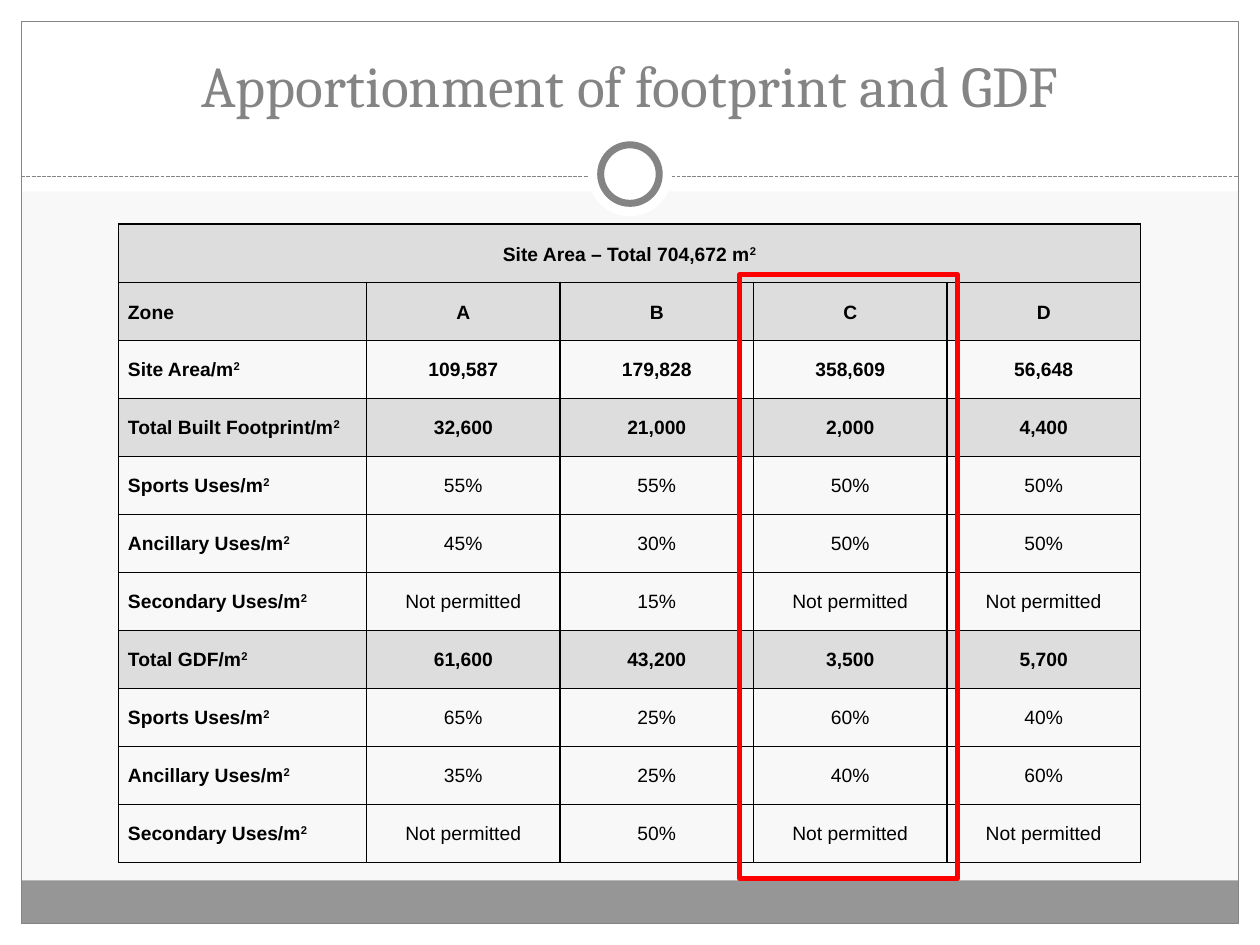
"""Builds a slide with a table of footprint and GDF by zone."""
from lxml.etree import SubElement
from pptx import Presentation
from pptx.dml.color import RGBColor
from pptx.enum.dml import MSO_LINE
from pptx.enum.shapes import MSO_CONNECTOR, MSO_SHAPE
from pptx.enum.text import MSO_ANCHOR, PP_ALIGN
from pptx.oxml.ns import qn
from pptx.util import Cm, Pt

WHITE = RGBColor(0xFF, 0xFF, 0xFF)
BLACK = RGBColor(0, 0, 0)
PALE = RGBColor(0xF8, 0xF8, 0xF8)
LIGHT = RGBColor(0xDD, 0xDD, 0xDD)
GREY = RGBColor(0x96, 0x96, 0x96)
DARK = RGBColor(0x84, 0x84, 0x84)
RED = RGBColor(0xFF, 0, 0)

WIDTH, HEIGHT, EDGE = 25.4, 19.05, 0.43
INNER = WIDTH - 2 * EDGE
COLS = [5, 3.9, 3.9, 3.9, 3.9]
ROW = 1.17
SHADED = (0, 1, 3, 7)
STRONG = (0, 1, 2, 3, 7)
ROWS = [
    ["Site Area – Total 704,672 m²", "", "", "", ""],
    ["Zone", "A", "B", "C", "D"],
    ["Site Area/m²", "109,587", "179,828", "358,609", "56,648"],
    ["Total Built Footprint/m²", "32,600", "21,000", "2,000", "4,400"],
    ["Sports Uses/m²", "55%", "55%", "50%", "50%"],
    ["Ancillary Uses/m²", "45%", "30%", "50%", "50%"],
    ["Secondary Uses/m²", "Not permitted", "15%", "Not permitted", "Not permitted"],
    ["Total GDF/m²", "61,600", "43,200", "3,500", "5,700"],
    ["Sports Uses/m²", "65%", "25%", "60%", "40%"],
    ["Ancillary Uses/m²", "35%", "25%", "40%", "60%"],
    ["Secondary Uses/m²", "Not permitted", "50%", "Not permitted", "Not permitted"],
]


def add_box(slide, kind, left, top, width, height, fill=None, line=None, weight=0.75):
    """Add a preset shape with an optional fill and outline."""
    box = slide.shapes.add_shape(kind, Cm(left), Cm(top), Cm(width), Cm(height))
    box.shadow.inherit = False
    if fill is None:
        box.fill.background()
    else:
        box.fill.solid()
        box.fill.fore_color.rgb = fill
    if line is None:
        box.line.fill.background()
    else:
        box.line.color.rgb = line
        box.line.width = Pt(weight)
    return box


def add_rule(slide, top):
    """Add the dashed rule under the title."""
    rule = slide.shapes.add_connector(
        MSO_CONNECTOR.STRAIGHT, Cm(EDGE), Cm(top), Cm(WIDTH - EDGE), Cm(top))
    rule.line.color.rgb = DARK
    rule.line.width = Pt(0.75)
    rule.line.dash_style = MSO_LINE.SQUARE_DOT
    SubElement(rule._element.spPr, qn("a:effectLst"))


def add_frame(slide):
    """Add the margins, footer band, border, rule and ring."""
    rect, oval = MSO_SHAPE.RECTANGLE, MSO_SHAPE.OVAL
    add_box(slide, rect, 0, HEIGHT - EDGE, WIDTH, EDGE, WHITE)
    add_box(slide, rect, 0, 0, WIDTH, 3.86, WHITE)
    for left in (0, WIDTH - EDGE):
        add_box(slide, rect, left, 0, EDGE, HEIGHT, WHITE)
    add_box(slide, rect, EDGE, 17.75, INNER, 0.87, GREY)
    add_box(slide, rect, EDGE, EDGE, INNER, HEIGHT - 2 * EDGE, line=DARK)
    add_rule(slide, 3.56)
    add_box(slide, oval, 11.85, 2.66, 1.7, 1.7, WHITE)
    add_box(slide, oval, 12.11, 2.92, 1.18, 1.18, WHITE, DARK, 4)


def style_font(font, name, size, color, bold=False):
    """Set the face, size, colour and weight of a font."""
    font.name, font.size, font.bold = name, Pt(size), bold
    font.color.rgb = color


def add_title(slide, text):
    """Add the centred title."""
    frame = slide.shapes.add_textbox(Cm(0.85), Cm(0.64), Cm(23.7), Cm(2.12)).text_frame
    frame.word_wrap = True
    frame.vertical_anchor = MSO_ANCHOR.MIDDLE
    frame.text = text
    para = frame.paragraphs[0]
    para.alignment = PP_ALIGN.CENTER
    style_font(para.runs[0].font, "Cambria", 33, DARK)


def set_edges(cell):
    """Draw a thin black line on each side of a cell."""
    props = cell._tc.get_or_add_tcPr()
    for side in ("lnL", "lnR", "lnT", "lnB"):
        edge = SubElement(props, qn(f"a:{side}"), w=str(Pt(1)))
        paint = SubElement(edge, qn("a:solidFill"))
        SubElement(paint, qn("a:srgbClr"), val=str(BLACK))


def set_text(cell, text, row, col):
    """Write the cell text, raising a final square sign."""
    para = cell.text_frame.paragraphs[0]
    base, square, _ = text.partition("²")
    para.text = base
    if square:
        power = para.add_run()
        power.text = "2"
        power._r.get_or_add_rPr().set("baseline", "30000")
    for run in para.runs:
        style_font(run.font, "Arial", 11, BLACK, col == 0 or row in STRONG)
    if col or row == 0:
        para.alignment = PP_ALIGN.CENTER
    else:
        para.alignment = PP_ALIGN.LEFT if row in (1, 3) else PP_ALIGN.JUSTIFY
    gap = Pt(12 if row < 2 else 6)
    para.space_before = gap
    para.space_after = gap if row else Pt(0)
    if row < 2:
        para.line_spacing = 1.15


def set_cell(cell, text, row, col):
    """Style one table cell and fill in its text."""
    set_edges(cell)
    cell.margin_left = cell.margin_right = Cm(0.19)
    cell.margin_top = cell.margin_bottom = 0
    cell.vertical_anchor = MSO_ANCHOR.MIDDLE
    if row in SHADED:
        cell.fill.solid()
        cell.fill.fore_color.rgb = LIGHT
    else:
        cell.fill.background()
    if text:
        set_text(cell, text, row, col)


def add_grid(slide):
    """Add the table of zones."""
    table = slide.shapes.add_table(
        len(ROWS), len(COLS), Cm(2.39), Cm(4.52),
        Cm(sum(COLS)), Cm(ROW * len(ROWS))).table
    table.first_row = table.horz_banding = False
    for column, width in zip(table.columns, COLS):
        column.width = Cm(width)
    for row, texts in enumerate(ROWS):
        table.rows[row].height = Cm(ROW)
        for col, text in enumerate(texts):
            set_cell(table.cell(row, col), text, row, col)
    table.cell(0, 0).merge(table.cell(0, len(COLS) - 1))


def main():
    """Build and save the slide."""
    deck = Presentation()
    deck.slide_width, deck.slide_height = Cm(WIDTH), Cm(HEIGHT)
    slide = deck.slides.add_slide(deck.slide_layouts[6])
    slide.background.fill.solid()
    slide.background.fill.fore_color.rgb = PALE
    add_frame(slide)
    add_title(slide, "Apportionment of footprint and GDF")
    add_grid(slide)
    add_box(slide, MSO_SHAPE.RECTANGLE, 14.91, 5.54, 4.39, 12.17, line=RED, weight=3)
    deck.save("out.pptx")


if __name__ == "__main__":
    main()
